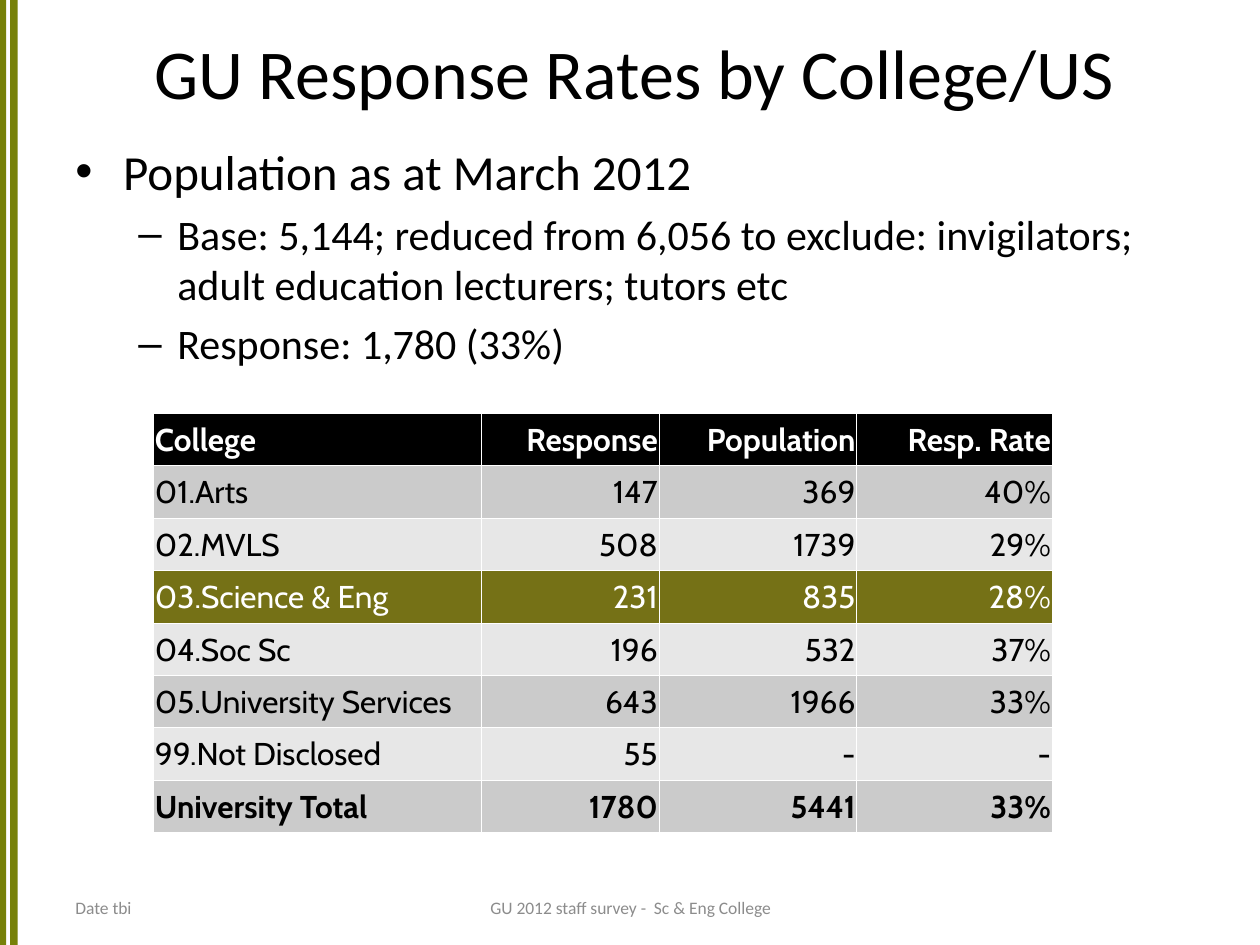
from lxml import etree
from pptx import Presentation
from pptx import util as u
from pptx.dml.color import RGBColor
from pptx.enum import shapes, text
from pptx.oxml import ns

COLUMNS, ROWS = 20, 15
LEFT, CENTER, RIGHT = text.PP_ALIGN.LEFT, text.PP_ALIGN.CENTER, text.PP_ALIGN.RIGHT
BLACK, WHITE, GREY = "000000", "FFFFFF", "8C8C8C"
OLIVE, HIGHLIGHT, DARK_BAND, LIGHT_BAND = "778109", "757116", "CBCBCB", "E7E7E7"

BULLETS = [
    (0, "Population as at March 2012"),
    (1, "Base: 5,144; reduced from 6,056 to exclude: invigilators; "
        "adult education lecturers; tutors etc"),
    (1, "Response: 1,780 (33%)"),
]
BULLET_LEVELS = [("•", 28, 0.38, 0.38), ("–", 24, 0.81, 0.31)]

RESPONSES = [
    ("College", "Response", "Population", "Resp. Rate"),
    ("01.Arts", "147", "369", "40%"),
    ("02.MVLS", "508", "1739", "29%"),
    ("03.Science & Eng", "231", "835", "28%"),
    ("04.Soc Sc", "196", "532", "37%"),
    ("05.University Services", "643", "1966", "33%"),
    ("99.Not Disclosed", "55", "-", "-"),
    ("University Total", "1780", "5441", "33%"),
]
HIGHLIGHT_ROW = 3


def color(value):
    return RGBColor.from_string(value)


def apply(target, values):
    for name, value in values.items():
        setattr(target, name, value)


def add_element(parent, tag, **attributes):
    return etree.SubElement(parent, ns.qn(tag), attributes)


class SlideBuilder:
    def __init__(self, deck, font):
        self.deck, self.font = deck, font
        self.column = deck.slide_width / COLUMNS
        self.row = deck.slide_height / ROWS
        self.page = deck.slides.add_slide(deck.slide_layouts[5])

    def area(self, left, top, width, height):
        return [int(left * self.column), int(top * self.row),
                int(width * self.column), int(height * self.row)]

    def add_words(self, para, words, size, ink=BLACK, align=LEFT, bold=False, font=None):
        para.alignment = align
        span = para.add_run()
        span.text = words
        apply(span.font, {"name": font or self.font, "size": u.Pt(size), "bold": bold})
        span.font.color.rgb = color(ink)

    def title(self, place, words, size):
        box = self.page.shapes.title
        apply(box, dict(zip(("left", "top", "width", "height"), self.area(*place))))
        apply(box.text_frame, {"vertical_anchor": text.MSO_ANCHOR.MIDDLE,
                               "auto_size": text.MSO_AUTO_SIZE.NONE})
        self.add_words(box.text_frame.paragraphs[0], words, size, align=CENTER)

    def bar(self, place, fill):
        shape = self.page.shapes.add_shape(shapes.MSO_SHAPE.RECTANGLE, *self.area(*place))
        shape.shadow.inherit = False
        shape.fill.solid()
        shape.fill.fore_color.rgb = color(fill)
        shape.line.fill.background()

    def frame(self, place, anchor):
        box = self.page.shapes.add_textbox(*self.area(*place))
        apply(box.text_frame, {"word_wrap": True, "vertical_anchor": anchor})
        return box.text_frame

    def label(self, place, words, size, ink, align=LEFT):
        frame = self.frame(place, text.MSO_ANCHOR.MIDDLE)
        self.add_words(frame.paragraphs[0], words, size, ink, align)

    def bullets(self, place, items):
        frame = self.frame(place, text.MSO_ANCHOR.TOP)
        for index, (level, words) in enumerate(items):
            para = frame.add_paragraph() if index else frame.paragraphs[0]
            mark, size, margin, hang = BULLET_LEVELS[level]
            apply(para, {"level": level, "space_before": u.Pt(size * 0.2)})
            self.add_words(para, words, size)
            props = para._p.get_or_add_pPr()
            props.set("marL", str(u.Inches(margin)))
            props.set("indent", str(-u.Inches(hang)))
            add_element(props, "a:buFont", typeface="Arial")
            add_element(props, "a:buChar", char=mark)

    def borders(self, cell, ink, width):
        props = cell._tc.get_or_add_tcPr()
        for index, side in enumerate("LRTB"):
            line = add_element(props, f"a:ln{side}", w=str(u.Pt(width)))
            add_element(add_element(line, "a:solidFill"), "a:srgbClr", val=ink)
            props.insert(index, line)

    def table(self, place, widths, records, font, size):
        table = self.page.shapes.add_table(
            len(records), len(widths), *self.area(*place)).table
        table.horz_banding = False
        for column, width in zip(table.columns, widths):
            column.width = int(width * self.column)
        last = len(records) - 1
        for r, record in enumerate(records):
            fill = {0: BLACK, HIGHLIGHT_ROW: HIGHLIGHT}.get(
                r, DARK_BAND if r % 2 else LIGHT_BAND)
            ink = WHITE if r in (0, HIGHLIGHT_ROW) else BLACK
            for c, words in enumerate(record):
                cell = table.cell(r, c)
                apply(cell, {"margin_left": u.Inches(0.01), "margin_right": u.Inches(0.01),
                             "margin_top": u.Inches(0.01), "margin_bottom": 0,
                             "vertical_anchor": text.MSO_ANCHOR.MIDDLE})
                cell.fill.solid()
                cell.fill.fore_color.rgb = color(fill)
                self.borders(cell, WHITE, 0.5)
                self.add_words(cell.text_frame.paragraphs[0], words, size, ink,
                               RIGHT if c else LEFT, r in (0, last), font)


def main():
    deck = Presentation()
    apply(deck, {"slide_width": u.Inches(10), "slide_height": u.Inches(7.5)})
    slide = SlideBuilder(deck, "Calibri")
    for left in (0.16, -0.02):
        slide.bar((left, 0, 0.12, ROWS), OLIVE)
    slide.title((1, 0.26, 18.12, 1.74), "GU Response Rates by College/US", 40)
    slide.bullets((1, 2.14, 18.12, 11.82), BULLETS)
    slide.label((1, 14.12, 4.66, 0.58), "Date tbi", 10, GREY)
    slide.label((6.84, 14.12, 6.34, 0.58),
                "GU 2012 staff survey -  Sc & Eng College", 10, GREY, CENTER)
    slide.table((2.44, 6.56, 14.24, 6.66), (5.2, 2.82, 3.14, 3.1), RESPONSES, "Cabin", 18)
    deck.save("out.pptx")


if __name__ == "__main__":
    main()
